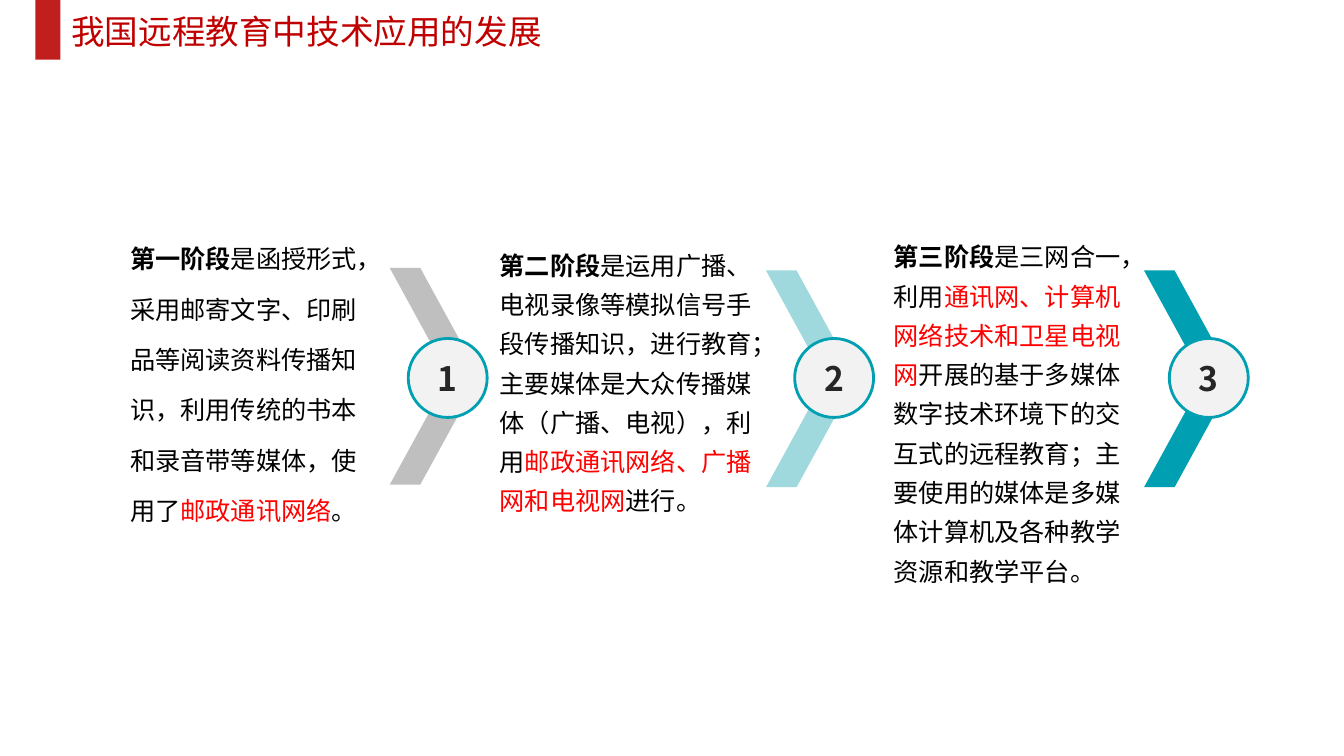
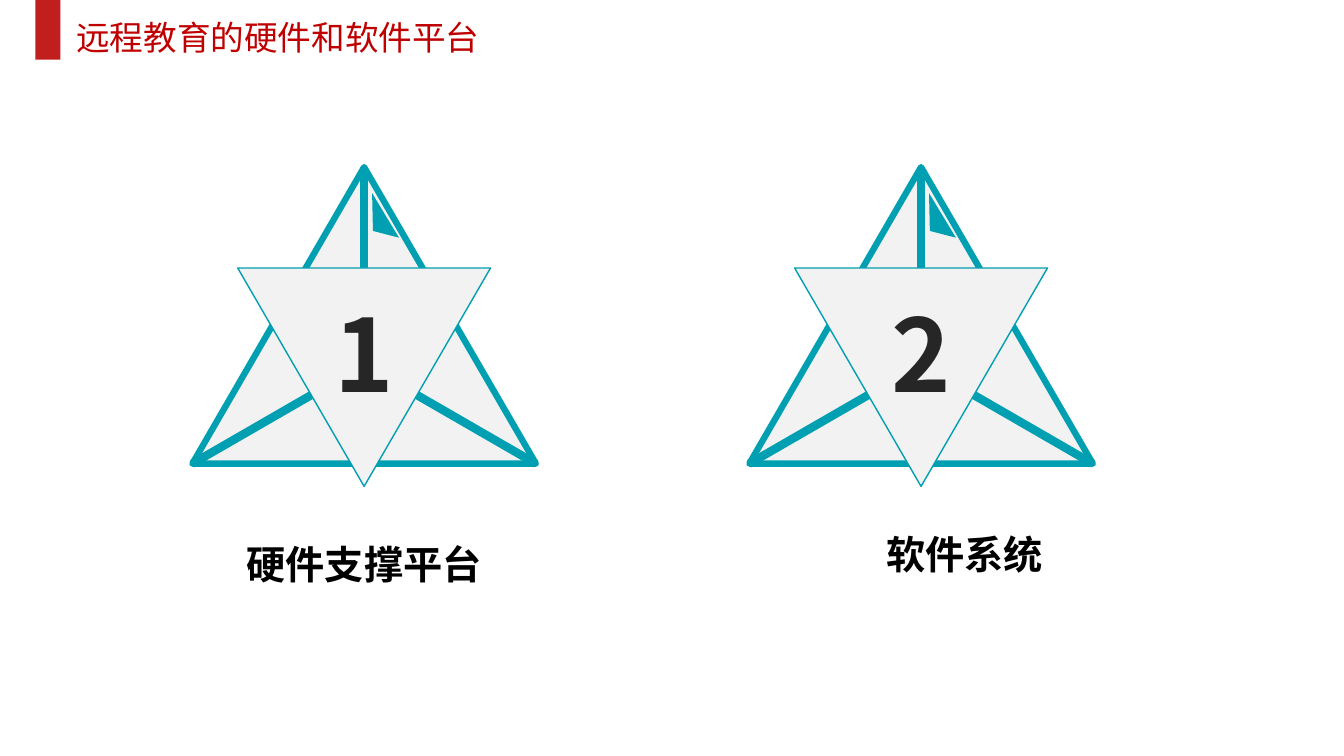
import lxml.etree
import pptx
import pptx.dml.color
import pptx.enum.shapes
import pptx.enum.text
import pptx.oxml.ns
import pptx.util

SHAPE = pptx.enum.shapes.MSO_SHAPE
ALIGN = pptx.enum.text.PP_ALIGN
COLORS = {
    "band": "C11E1E",
    "title": "C00000",
    "teal": "009FB1",
    "light_teal": "9FD9DE",
    "grey": "BFBFBF",
    "pale": "F2F2F2",
    "dark": "262626",
    "black": "000000",
    "red": "FF0000",
}


class Deck:
    font = "Noto Sans CJK SC"
    columns = 160
    rows = 90

    def __init__(self):
        self.presentation = pptx.Presentation()
        self.presentation.slide_width = pptx.util.Inches(13.33)
        self.presentation.slide_height = pptx.util.Inches(7.5)
        self.slide = None
        self.shapes = None

    def x(self, column):
        return round(self.presentation.slide_width * column / self.columns)

    def y(self, row):
        return round(self.presentation.slide_height * row / self.rows)

    def place(self, left, top, width, height):
        return self.x(left), self.y(top), self.x(width), self.y(height)

    def color(self, name):
        return pptx.dml.color.RGBColor.from_string(COLORS[name])

    def new_slide(self, title, title_place):
        self.slide = self.presentation.slides.add_slide(self.presentation.slide_layouts[6])
        self.shapes = self.slide.shapes
        self.shape(SHAPE.RECTANGLE, (4.2, 0, 3, 7.1), "band")
        self.text([(title, "title", False)], title_place, 24, wrap=False)

    def start_group(self):
        self.shapes = self.slide.shapes.add_group_shape().shapes

    def end_group(self):
        self.shapes = self.slide.shapes

    def paint(self, shape, fill, line=None, line_width=1):
        shape.shadow.inherit = False
        shape.fill.solid()
        shape.fill.fore_color.rgb = self.color(fill)
        if line:
            shape.line.color.rgb = self.color(line)
            shape.line.width = pptx.util.Pt(line_width)
        else:
            shape.line.fill.background()

    def shape(self, kind, place, fill, line=None, line_width=1):
        shape = self.shapes.add_shape(kind, *self.place(*place))
        self.paint(shape, fill, line, line_width)
        return shape

    def polygon(self, points, fill):
        corners = [(self.x(column), self.y(row)) for column, row in points]
        builder = self.shapes.build_freeform(*corners[0])
        builder.add_line_segments(corners[1:], close=True)
        self.paint(builder.convert_to_shape(), fill)

    def line(self, start, end, color, width):
        connector = self.shapes.add_connector(
            pptx.enum.shapes.MSO_CONNECTOR.STRAIGHT,
            self.x(start[0]), self.y(start[1]), self.x(end[0]), self.y(end[1]))
        connector.line.color.rgb = self.color(color)
        connector.line.width = pptx.util.Pt(width)
        lxml.etree.SubElement(connector._element.spPr, pptx.oxml.ns.qn("a:effectLst"))

    def fill_text(self, text_frame, parts, size, align=ALIGN.LEFT, spacing=None):
        paragraph = text_frame.paragraphs[0]
        paragraph.alignment = align
        paragraph.line_spacing = spacing
        for text, color, bold in parts:
            run = paragraph.add_run()
            run.text = text
            run.font.size = pptx.util.Pt(size)
            run.font.bold = bold
            run.font.name = self.font
            run.font.color.rgb = self.color(color)
            east_asian = lxml.etree.SubElement(
                run._r.get_or_add_rPr(), pptx.oxml.ns.qn("a:ea"))
            east_asian.set("typeface", self.font)

    def text(self, parts, place, size, align=ALIGN.LEFT, spacing=None, wrap=True):
        text_frame = self.shapes.add_textbox(*self.place(*place)).text_frame
        text_frame.word_wrap = wrap
        text_frame.auto_size = pptx.enum.text.MSO_AUTO_SIZE.SHAPE_TO_FIT_TEXT
        self.fill_text(text_frame, parts, size, align, spacing)

    def chevron(self, left, top, fill):
        chevron = self.shape(SHAPE.CHEVRON, (left, top, 10.7, 25.8), fill)
        chevron.adjustments[0] = 0.66

    def badge(self, number, left):
        badge = self.shape(SHAPE.OVAL, (left, 40.3, 9.4, 9.4), "pale", "teal", 2)
        badge.text_frame.vertical_anchor = pptx.enum.text.MSO_ANCHOR.MIDDLE
        self.fill_text(badge.text_frame, [(number, "dark", True)], 24, ALIGN.CENTER)

    def pyramid(self, number, left):
        top, width, height = 19.9, 40.9, 35.3
        middle, bottom = left + width / 2, top + height
        center = (middle, 43.4)
        self.start_group()
        self.shape(SHAPE.ISOSCELES_TRIANGLE, (left, top, width, height), "pale", "teal", 4.5)
        for corner in ((middle, top), (left, bottom), (left + width, bottom)):
            self.line(corner, center, "teal", 6)
        self.polygon([(left + 21.5, 27.5), (left + 24.6, 28.3), (left + 21.4, 23)], "teal")
        face = self.shape(
            SHAPE.ISOSCELES_TRIANGLE, (middle - 15.05, 31.9, 30.1, 26), "pale", "teal")
        face.rotation = 180
        self.text([(number, "dark", True)], (middle - 4.9, 34.1, 9.8, 15.7),
                  72, ALIGN.CENTER, wrap=False)
        self.end_group()


STAGES = [
    {"chevron": (46.4, 31.9, "grey"), "badge": 48.6,
     "place": (14.3, 26, 30.7, 37.6), "spacing": pptx.util.Pt(36),
     "parts": [
         ("第一阶段", "black", True),
         ("是函授形式，采用邮寄文字、印刷品等阅读资料传播知识，利用传统的书本和录音带等媒体，使用了",
          "black", False),
         ("邮政通讯网络", "red", False),
         ("。", "black", False)]},
    {"chevron": (91.2, 32.2, "light_teal"), "badge": 94.6,
     "place": (58.3, 28.1, 35, 33.8), "spacing": 1.3,
     "parts": [
         ("第二阶段", "black", True),
         ("是运用广播、电视录像等模拟信号手段传播知识，进行教育；主要媒体是大众传播媒体（广播、电视），利用",
          "black", False),
         ("邮政通讯网络、广播网和电视网", "red", False),
         ("进行。", "black", False)]},
    {"chevron": (136.2, 32.2, "teal"), "badge": 139.2,
     "place": (105.2, 27.1, 31.4, 43.3), "spacing": 1.3,
     "parts": [
         ("第三阶段", "black", True),
         ("是三网合一，利用", "black", False),
         ("通讯网、计算机网络技术和卫星电视网", "red", False),
         ("开展的基于多媒体数字技术环境下的交互式的远程教育；主要使用的媒体是多媒体计算机及各种教学资源和教学平台。",
          "black", False)]},
]

PLATFORMS = [
    (22.9, "硬件支撑平台", (28, 63.7, 30.7, 6.8), False),
    (89.2, "软件系统", (99.8, 62.5, 30.1, 6.8), True),
]


def main():
    deck = Deck()

    deck.new_slide("我国远程教育中技术应用的发展", (7.3, 0.7, 58.9, 6))
    for number, stage in enumerate(STAGES, 1):
        deck.chevron(*stage["chevron"])
        deck.badge(str(number), stage["badge"])
        deck.text(stage["parts"], stage["place"], 18, spacing=stage["spacing"])

    deck.new_slide("远程教育的硬件和软件平台", (7.9, 1.4, 50.9, 6))
    for number, (left, label, place, wrap) in enumerate(PLATFORMS, 1):
        deck.pyramid(str(number), left)
        deck.text([(label, "black", True)], place, 28, ALIGN.CENTER, wrap=wrap)

    deck.presentation.save("out.pptx")


if __name__ == "__main__":
    main()
